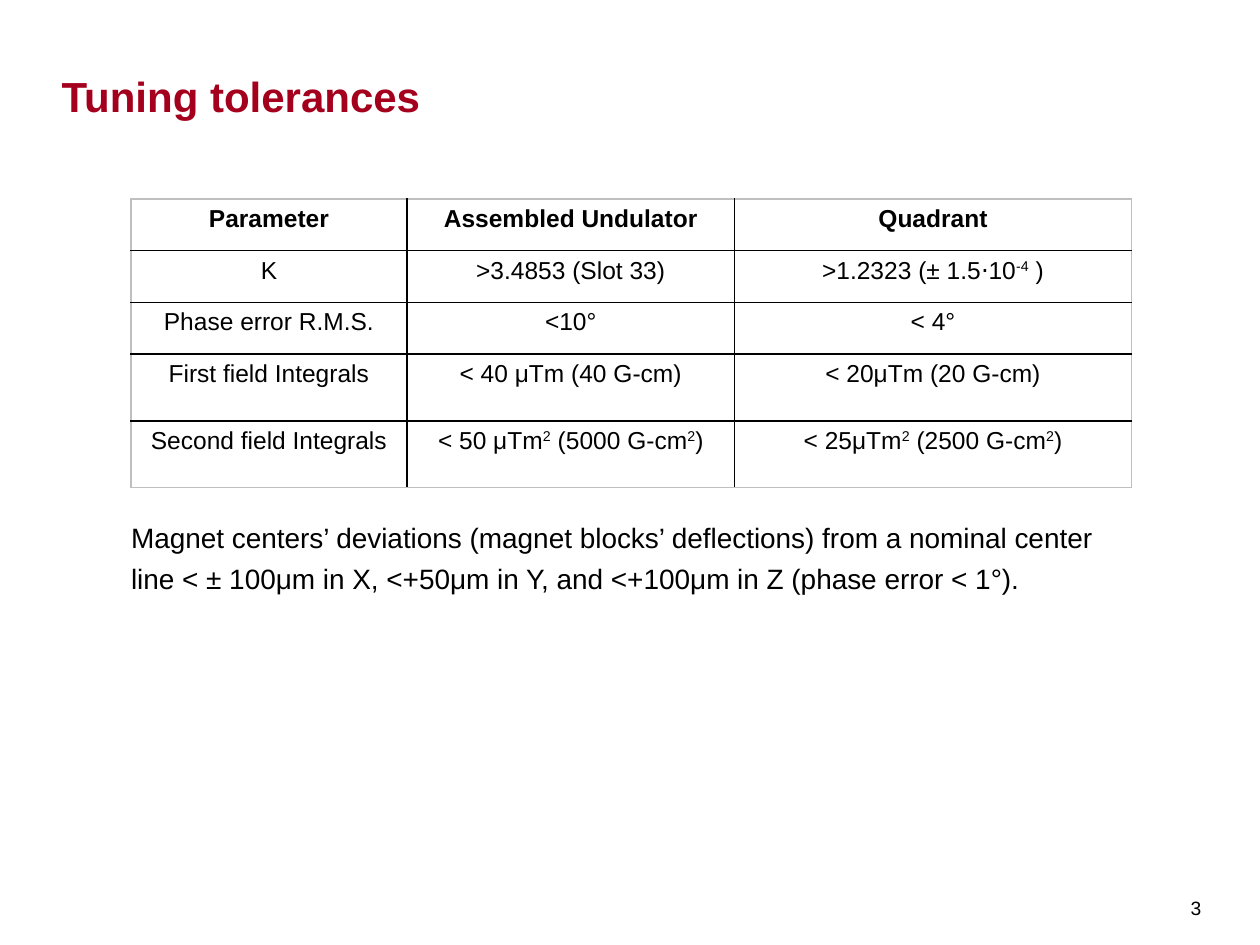
from collections import namedtuple
from dataclasses import dataclass

from lxml.etree import SubElement
from pptx import Presentation
from pptx.dml.color import RGBColor
from pptx.enum.text import MSO_ANCHOR as Anchor, PP_ALIGN as Align
from pptx.oxml.ns import qn
from pptx.util import Inches, Pt

WIDTH, HEIGHT = Inches(10), Inches(7.5)
COLUMN, ROW = WIDTH / 100, HEIGHT / 75
Box = namedtuple("Box", "left top width height")


@dataclass(frozen=True)
class Theme:
    """Colours, font and type sizes of the deck."""
    font: str = "Arial"
    accent: str = "A4001D"
    ink: str = "000000"
    frame: str = "BFBFBF"
    title: int = 24
    body: int = 16
    cell: int = 14
    number: int = 11


THEME = Theme()
TOLERANCES = [
    ["Parameter", "Assembled Undulator", "Quadrant"],
    ["K", ">3.4853 (Slot 33)", ">1.2323 (± 1.5⋅10^-4^ )"],
    ["Phase error R.M.S.", "<10°", "< 4°"],
    ["First field Integrals", "< 40 μTm (40 G-cm)", "< 20μTm (20 G-cm)"],
    ["Second field Integrals", "< 50 μTm^2^ (5000 G-cm^2^)",
     "< 25μTm^2^ (2500 G-cm^2^)"],
]
COLUMN_SPANS = [21.9, 26, 31.5]
ROW_SPANS = [4.1, 4.1, 4.1, 5.3, 5.3]


def emu(box):
    """Turn grid columns and rows into slide lengths."""
    return (int(box.left * COLUMN), int(box.top * ROW),
            int(box.width * COLUMN), int(box.height * ROW))


def write(frame, text, size, color=THEME.ink, bold=False, align=Align.LEFT,
          line_spacing=None, space_after=None):
    """Fill a text frame; parts between carets are superscript."""
    paragraph = frame.paragraphs[0]
    paragraph.alignment = align
    paragraph.line_spacing = line_spacing
    paragraph.space_after = space_after
    for index, part in enumerate(text.split("^")):
        run = paragraph.add_run()
        run.text = part
        run.font.name = THEME.font
        run.font.size = Pt(size)
        run.font.bold = bold
        run.font.color.rgb = RGBColor.from_string(color)
        if index % 2:
            run._r.get_or_add_rPr().set("baseline", "30000")


def add_text(slide, box, text, size, anchor=Anchor.TOP, inset=0, **style):
    """Place a wrapped text box with an equal inset on its sides."""
    frame = slide.shapes.add_textbox(*emu(box)).text_frame
    frame.word_wrap = True
    frame.vertical_anchor = anchor
    frame.margin_left = frame.margin_right = Inches(inset)
    frame.margin_top = frame.margin_bottom = Inches(inset)
    write(frame, text, size, **style)


def add_borders(cell, outer_sides):
    """Rule a cell in ink, with the frame colour on the table's outer sides."""
    properties = cell._tc.get_or_add_tcPr()
    for position, side in enumerate("LRTB"):
        line = properties.makeelement(qn(f"a:ln{side}"), {"w": str(Pt(1))})
        fill = SubElement(line, qn("a:solidFill"))
        color = THEME.frame if side in outer_sides else THEME.ink
        SubElement(fill, qn("a:srgbClr"), val=color)
        properties.insert(position, line)


def add_tolerance_table(slide, box):
    """Build the table of tuning tolerances."""
    rows, columns = len(ROW_SPANS), len(COLUMN_SPANS)
    table = slide.shapes.add_table(rows, columns, *emu(box)).table
    for column, span in zip(table.columns, COLUMN_SPANS):
        column.width = int(span * COLUMN)
    for row, span in zip(table.rows, ROW_SPANS):
        row.height = int(span * ROW)
    table.first_row = table.horz_banding = False
    for r, values in enumerate(TOLERANCES):
        for c, value in enumerate(values):
            cell = table.cell(r, c)
            cell.fill.background()
            write(cell.text_frame, value, THEME.cell, bold=r == 0,
                  align=Align.CENTER)
            edges = {"L": c == 0, "R": c == columns - 1,
                     "T": r == 0, "B": r == rows - 1}
            add_borders(cell, [side for side, outer in edges.items() if outer])


def add_title(slide, box):
    """Place the slide title."""
    add_text(slide, box, "Tuning tolerances", THEME.title,
             anchor=Anchor.BOTTOM, color=THEME.accent, bold=True)


def add_deviation_note(slide, box):
    """Place the note on magnet centers."""
    add_text(slide, box,
             "Magnet centers’ deviations (magnet blocks’ deflections) from a "
             "nominal center line < ± 100μm in X, <+50μm in Y, and <+100μm "
             "in Z (phase error < 1°).",
             THEME.body, line_spacing=1.2, space_after=Pt(3))


def add_page_number(slide, box):
    """Place the page number."""
    add_text(slide, box, "3", THEME.number, anchor=Anchor.MIDDLE, inset=0.08)


def main():
    """Build and save the slide."""
    deck = Presentation()
    deck.slide_width, deck.slide_height = WIDTH, HEIGHT
    slide = deck.slides.add_slide(deck.slide_layouts[6])
    add_title(slide, Box(4.9, 1.4, 88.6, 8.2))
    add_tolerance_table(
        slide, Box(10.4, 15.8, sum(COLUMN_SPANS), sum(ROW_SPANS)))
    add_deviation_note(slide, Box(10.4, 40.8, 79.4, 7.5))
    add_page_number(slide, Box(93.7, 69.1, 3.5, 5.9))
    deck.save("out.pptx")


if __name__ == "__main__":
    main()
